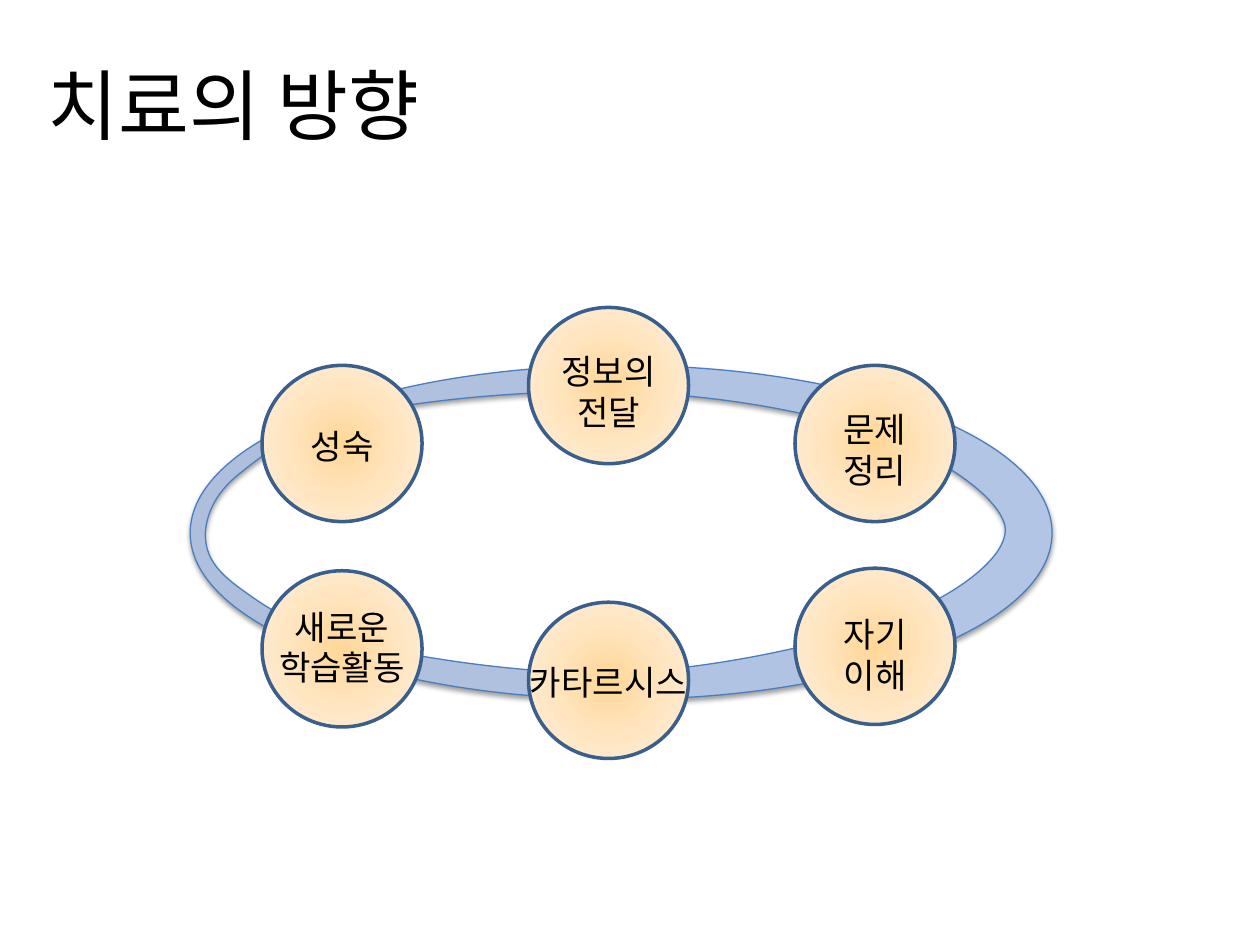
from lxml import etree
from pptx import Presentation
from pptx.dml.color import RGBColor
from pptx.enum.shapes import MSO_SHAPE
from pptx.enum.text import MSO_ANCHOR, PP_ALIGN
from pptx.oxml import parse_xml
from pptx.oxml.ns import nsdecls, qn
from pptx.util import Inches, Pt

OVAL = MSO_SHAPE.OVAL
LEFT, CENTER = PP_ALIGN.LEFT, PP_ALIGN.CENTER
TOP, MIDDLE = MSO_ANCHOR.TOP, MSO_ANCHOR.MIDDLE

FONT = "Noto Sans CJK KR"
TITLE_ONLY = 5
CIRCLE_W, CIRCLE_H = 1.27, 1.24
COLUMNS = [2.08 + 2.115 * i for i in range(3)]

# Step text, column, circle top, label width, label height, label drop
STEPS = [
    ("새로운 학습활동", 0, 4.53, 1.27, 0.76, 0.23),
    ("성숙", 0, 2.9, 0.72, 0.43, 0.43),
    ("카타르시스", 1, 4.78, 1.62, 0.43, 0.42),
    ("정보의 전달", 1, 2.44, 1.11, 0.76, 0.29),
    ("자기 이해", 2, 4.51, 0.81, 0.76, 0.31),
    ("문제 정리", 2, 2.9, 0.87, 0.76, 0.29),
]

# Ring contours in hundredths of an inch: a start, then three points per curve
OUTER = [
    (151, 423), (151, 349), (304, 290), (493, 290), (682, 290), (835, 349), (835, 423),
    (835, 496), (682, 555), (493, 555), (304, 555), (151, 496), (151, 423),
]
INNER = [
    (163, 423), (163, 438), (168, 450), (188, 465), (207, 479), (231, 497), (279, 509),
    (328, 522), (421, 536), (492, 534), (563, 531), (651, 513), (705, 493),
    (759, 474), (805, 439), (797, 415), (789, 391), (742, 359), (687, 342),
    (633, 324), (560, 313), (493, 311), (426, 309), (335, 317), (284, 329),
    (234, 341), (210, 360), (190, 376), (170, 392), (164, 409), (163, 423),
]


def color(hex_value):
    return RGBColor.from_string(hex_value)


def set_all(target, values):
    for name, value in values.items():
        setattr(target, name, value)


def fill_gradient(shape, stops, direction):
    stop_xml = "".join(
        f'<a:gs pos="{share * 1000}"><a:srgbClr val="{value}"/></a:gs>' for share, value in stops
    )
    shape.fill.gradient()
    old = shape._element.spPr.find(qn("a:gradFill"))
    new = parse_xml(
        f'<a:gradFill {nsdecls("a")} rotWithShape="1"><a:gsLst>{stop_xml}</a:gsLst>{direction}</a:gradFill>'
    )
    old.getparent().replace(old, new)


def outline(shape, hex_value, points):
    shape.line.color.rgb = color(hex_value)
    shape.line.width = Pt(points)
    shape.shadow.inherit = False


def write(shape, text, size, align, anchor):
    frame = shape.text_frame
    set_all(frame, {"word_wrap": True, "vertical_anchor": anchor})
    paragraph = frame.paragraphs[0]
    paragraph.alignment = align
    run = paragraph.add_run()
    run.text = text
    set_all(run.font, {"size": Pt(size), "name": FONT})
    run.font.color.rgb = color("000000")
    east_asian = etree.SubElement(run.font._element, qn("a:ea"))
    east_asian.set("typeface", FONT)


def curve_segments(shape):
    """Join each three line segments into one cubic curve."""
    path = next(shape._element.iter(qn("a:path")))
    lines = path.findall(qn("a:lnTo"))
    for first in range(0, len(lines), 3):
        curve = etree.Element(qn("a:cubicBezTo"))
        lines[first].addprevious(curve)
        for line in lines[first:first + 3]:
            curve.append(line[0])
            path.remove(line)


def add_ring(slide):
    builder = slide.shapes.build_freeform(*OUTER[0], scale=Inches(0.01))
    builder.add_line_segments(OUTER[1:], close=True)
    builder.move_to(*INNER[0])
    builder.add_line_segments(INNER[1:], close=True)
    ring = builder.convert_to_shape()
    curve_segments(ring)
    fill_gradient(ring, [(0, "AEBFDE"), (100, "B3C5E5")], '<a:lin ang="0" scaled="0"/>')
    outline(ring, "4B7EBC", 0.75)
    # Soft shadow straight below the ring
    ring._element.spPr.find(qn("a:effectLst")).append(parse_xml(
        f'<a:outerShdw {nsdecls("a")} blurRad="{Pt(3.1)}" dist="{Pt(1.6)}" dir="5400000" rotWithShape="0">'
        '<a:srgbClr val="000000"><a:alpha val="38000"/></a:srgbClr></a:outerShdw>'
    ))


def add_circle(slide, left, top):
    circle = slide.shapes.add_shape(
        OVAL, Inches(left), Inches(top), Inches(CIRCLE_W), Inches(CIRCLE_H)
    )
    fill_gradient(
        circle,
        [(0, "FFD797"), (50, "FFE5C0"), (100, "FFF2E0")],
        '<a:path path="circle"><a:fillToRect l="50000" t="50000" r="50000" b="50000"/></a:path>',
    )
    outline(circle, "3A5F8C", 2)


def add_label(slide, text, center, top, width, height):
    label = slide.shapes.add_textbox(
        Inches(center - width / 2), Inches(top), Inches(width), Inches(height)
    )
    write(label, text, 19.5, CENTER, TOP)


def main():
    deck = Presentation()
    set_all(deck, {"slide_width": Inches(10), "slide_height": Inches(7.5)})
    slide = deck.slides.add_slide(deck.slide_layouts[TITLE_ONLY])

    add_ring(slide)

    # Title
    title = slide.shapes.title
    set_all(title, {
        "left": Inches(0.28), "top": Inches(0.23),
        "width": Inches(8.25), "height": Inches(1.19),
    })
    write(title, "치료의 방향", 44, LEFT, MIDDLE)

    # Steps around the ring, circles below labels
    for _, column, top, *_ in STEPS:
        add_circle(slide, COLUMNS[column], top)
    for text, column, top, width, height, drop in STEPS:
        add_label(slide, text, COLUMNS[column] + CIRCLE_W / 2, top + drop, width, height)

    deck.save("out.pptx")


if __name__ == "__main__":
    main()
